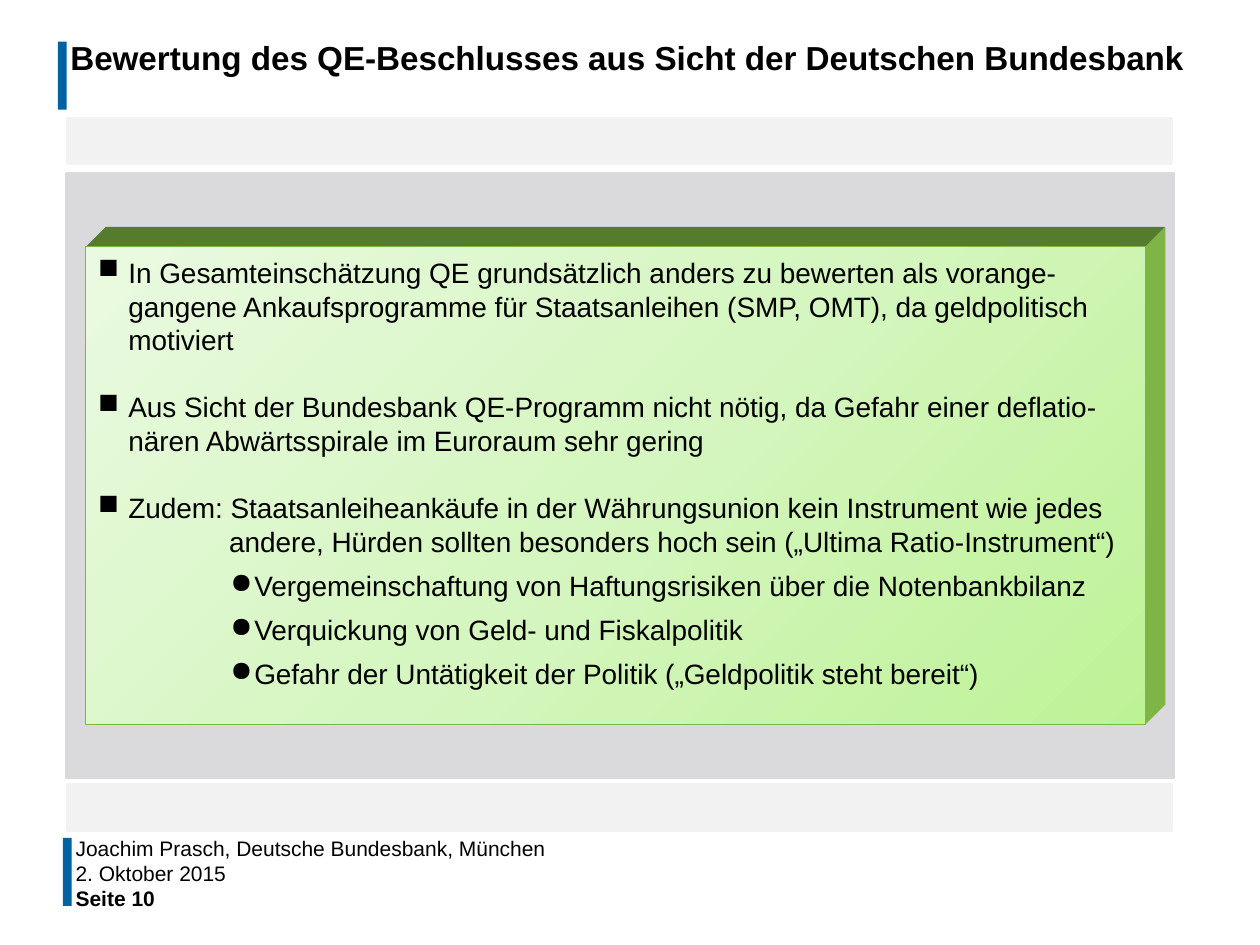
from dataclasses import dataclass

from lxml import etree
from pptx import Presentation
from pptx.dml.color import RGBColor
from pptx.enum.shapes import MSO_SHAPE
from pptx.enum.text import MSO_ANCHOR
from pptx.oxml import parse_xml
from pptx.oxml.ns import nsdecls, qn
from pptx.util import Inches, Pt

RECTANGLE = MSO_SHAPE.RECTANGLE
TOP = MSO_ANCHOR.TOP
MIDDLE = MSO_ANCHOR.MIDDLE
FONT = "Arial"
COLORS = {
    "text": "000000",
    "accent": "0062A1",
    "panel": "DADADC",
    "band": "F2F2F2",
    "bevel_top": "557B2D",
    "bevel_side": "7FB447",
    "glow": "BEF297",
    "middle": "D5F6C0",
    "pale": "EAFAE0",
}


@dataclass
class Block:
    left: float
    top: float
    width: float
    height: float
    color: str
    outline: float = 0


@dataclass
class Point:
    text: str
    margin: float
    hanging: float = 0
    bullet: str = ""
    after: float = 6


@dataclass
class Label:
    text: str
    top: float
    bold: bool = False


BLOCKS = [
    Block(0.46, 0.33, 0.07, 0.54, "accent"),
    Block(0.5, 6.65, 0.07, 0.54, "accent"),
    Block(0.53, 1.38, 8.78, 4.79, "panel", 2),
    Block(0.54, 0.94, 8.76, 0.36, "band", 2),
    Block(0.54, 6.23, 8.76, 0.36, "band", 2),
]
LINE_PITCH = 19.2
POINTS = [
    Point("In Gesamteinschätzung QE grundsätzlich anders zu bewerten als vorange-\v"
          "gangene Ankaufsprogramme für Staatsanleihen (SMP, OMT), da geldpolitisch\v"
          "motiviert", 0.24, 0.24, "■", LINE_PITCH),
    Point("Aus Sicht der Bundesbank QE-Programm nicht nötig, da Gefahr einer deflatio-\v"
          "nären Abwärtsspirale im Euroraum sehr gering", 0.24, 0.24, "■", LINE_PITCH),
    Point("Zudem: Staatsanleiheankäufe in der Währungsunion kein Instrument wie jedes",
          0.24, 0.24, "■", 0),
    Point("andere, Hürden sollten besonders hoch sein („Ultima Ratio-Instrument“)", 1.04),
    Point("Vergemeinschaftung von Haftungsrisiken über die Notenbankbilanz", 1.24, 0.19, "●"),
    Point("Verquickung von Geld- und Fiskalpolitik", 1.24, 0.19, "●"),
    Point("Gefahr der Untätigkeit der Politik („Geldpolitik steht bereit“)", 1.24, 0.19, "●"),
]
FOOTER = [
    Label("Joachim Prasch, Deutsche Bundesbank, München", 6.64),
    Label("2. Oktober 2015", 6.84),
    Label("Seite 10", 7.04, True),
]
FRONT = Block(0.68, 1.96, 8.41, 3.79, "glow", 0.5)
DEPTH = 0.16


def rgb(name: str) -> RGBColor:
    return RGBColor.from_string(COLORS[name])


def paint(shape, color: str, outline: float = 0) -> None:
    shape.shadow.inherit = False
    shape.fill.solid()
    shape.fill.fore_color.rgb = rgb(color)
    if outline:
        shape.line.color.rgb = rgb(color)
        shape.line.width = Pt(outline)
    else:
        shape.line.fill.background()


def add_block(slide, block: Block):
    shape = slide.shapes.add_shape(
        RECTANGLE, Inches(block.left), Inches(block.top),
        Inches(block.width), Inches(block.height))
    paint(shape, block.color, block.outline)
    return shape


def add_face(slide, corners: list[tuple[float, float]], color: str) -> None:
    start, *others = [(Inches(x), Inches(y)) for x, y in corners]
    builder = slide.shapes.build_freeform(*start)
    builder.add_line_segments(others, close=True)
    paint(builder.convert_to_shape(), color)


def add_bevelled_board(slide) -> None:
    left, top = FRONT.left, FRONT.top
    right, bottom = left + FRONT.width, top + FRONT.height
    add_face(slide, [(left, top), (left + DEPTH, top - DEPTH),
                     (right + DEPTH, top - DEPTH), (right, top)], "bevel_top")
    add_face(slide, [(right, top), (right + DEPTH, top - DEPTH),
                     (right + DEPTH, bottom - DEPTH), (right, bottom)], "bevel_side")
    board = add_block(slide, FRONT)
    board.line.color.rgb = rgb("bevel_side")
    stops = "".join(
        f'<a:gs pos="{position}"><a:srgbClr val="{COLORS[name]}"/></a:gs>'
        for position, name in [(0, "glow"), (50000, "middle"), (100000, "pale")])
    gradient = parse_xml(
        f'<a:gradFill {nsdecls("a")} rotWithShape="1"><a:gsLst>{stops}</a:gsLst>'
        '<a:path path="circle"><a:fillToRect l="100000" t="100000"/></a:path></a:gradFill>')
    properties = board.element.spPr
    properties.replace(properties.find(qn("a:solidFill")), gradient)


def add_frame(slide, left: float, top: float, width: float, height: float,
              inset: float, anchor=TOP):
    frame = slide.shapes.add_textbox(
        Inches(left), Inches(top), Inches(width), Inches(height)).text_frame
    frame.word_wrap = True
    frame.vertical_anchor = anchor
    frame.margin_left = frame.margin_right = Inches(inset)
    frame.margin_top = frame.margin_bottom = Inches(inset / 2)
    return frame


def write(paragraph, text: str, size: float, bold: bool = False) -> None:
    paragraph.text = text
    paragraph.font.name = FONT
    paragraph.font.size = Pt(size)
    paragraph.font.bold = bold
    paragraph.font.color.rgb = rgb("text")


def add_points(slide) -> None:
    frame = add_frame(slide, FRONT.left, 1.98, 8.86, 3.77, 0.1)
    for index, point in enumerate(POINTS):
        paragraph = frame.add_paragraph() if index else frame.paragraphs[0]
        write(paragraph, point.text, 16)
        paragraph.line_spacing = Pt(LINE_PITCH)
        paragraph.space_after = Pt(point.after)
        properties = paragraph._p.get_or_add_pPr()
        properties.set("marL", str(Inches(point.margin)))
        properties.set("indent", str(-Inches(point.hanging)))
        if point.bullet:
            bullet = etree.Element(qn("a:buChar"), char=point.bullet)
            properties.find(qn("a:defRPr")).addprevious(bullet)


def main() -> None:
    presentation = Presentation()
    presentation.slide_width = Inches(10)
    presentation.slide_height = Inches(7.5)
    slide = presentation.slides.add_slide(presentation.slide_layouts[6])
    for block in BLOCKS:
        add_block(slide, block)
    title = add_frame(slide, 0.46, 0.28, 9.47, 0.71, 0.1).paragraphs[0]
    write(title, "Bewertung des QE-Beschlusses aus Sicht der Deutschen Bundesbank", 19, True)
    title.line_spacing = Pt(20.4)
    add_bevelled_board(slide)
    add_points(slide)
    for label in FOOTER:
        frame = add_frame(slide, 0.51, label.top, 8.88, 0.18, 0.09, MIDDLE)
        write(frame.paragraphs[0], label.text, 12, label.bold)
    presentation.save("out.pptx")


if __name__ == "__main__":
    main()
